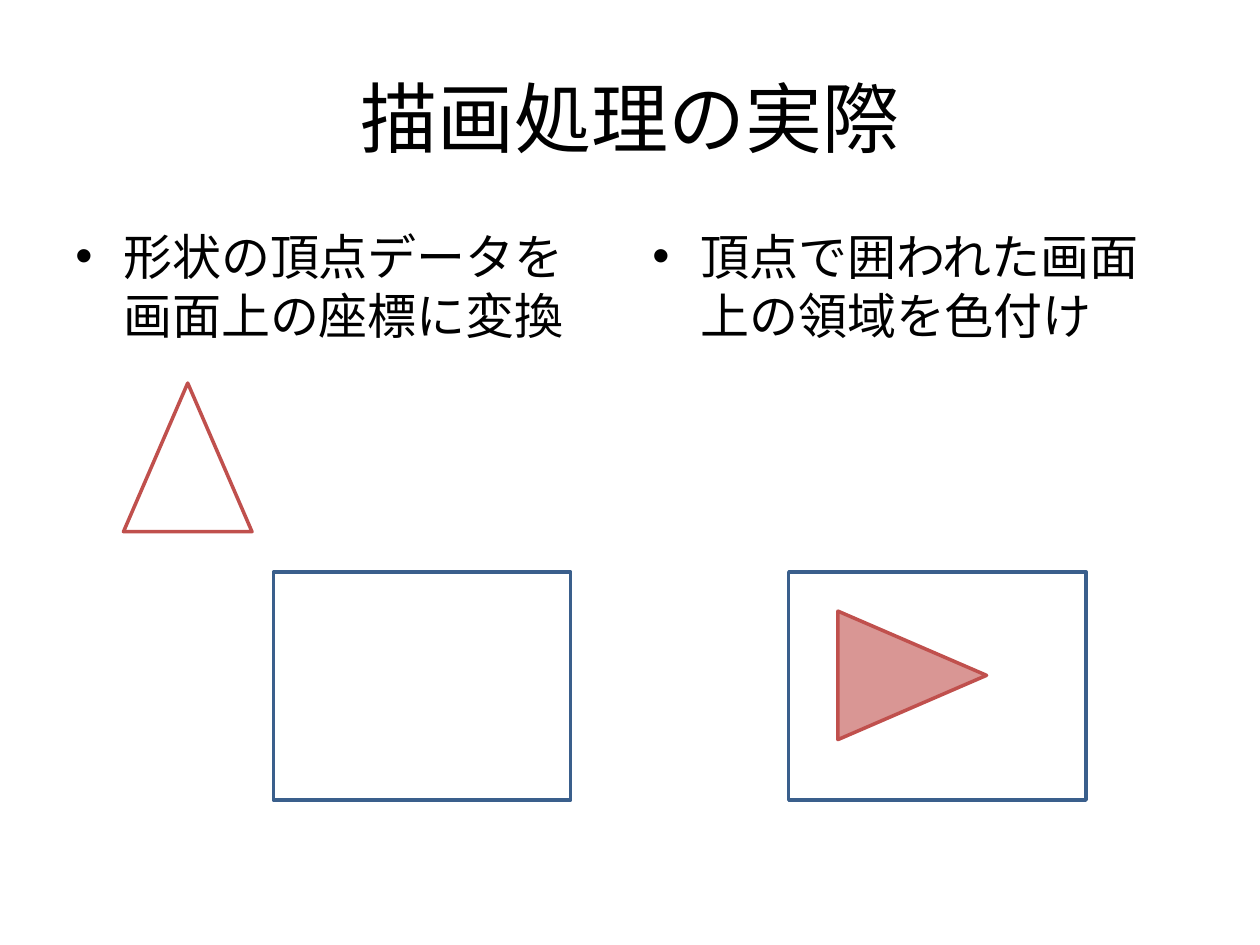
from lxml import etree
from pptx import Presentation
from pptx.dml.color import RGBColor
from pptx.enum.shapes import MSO_SHAPE
from pptx.enum.text import MSO_ANCHOR, PP_ALIGN
from pptx.oxml.ns import qn
from pptx.util import Inches, Pt

RECTANGLE, TRIANGLE = MSO_SHAPE.RECTANGLE, MSO_SHAPE.ISOSCELES_TRIANGLE
TOP, MIDDLE = MSO_ANCHOR.TOP, MSO_ANCHOR.MIDDLE
LEFT, CENTER = PP_ALIGN.LEFT, PP_ALIGN.CENTER

THEME = {
    "font": "Noto Sans CJK JP",
    "title_size": 44,
    "body_size": 28,
    "line_pitch": 1.2,
    "line_width": 2,
    "text": "000000",
    "screen_fill": "FFFFFF",
    "screen_line": "3A5F8C",
    "triangle_fill": "D99694",
    "triangle_line": "C0504D",
}

TITLE = "描画処理の実際"
STEPS = [
    "形状の頂点データを画面上の座標に変換",
    "頂点で囲われた画面上の領域を色付け",
]

SLIDE_SIZE = (10, 7.5)
MARGIN = 0.5
TITLE_TOP, TITLE_HEIGHT = 0.3, 1.25
STEP_TOP, STEP_WIDTH, STEP_HEIGHT = 1.75, 4.42, 4.95
BULLET_INDENT = 0.38

SCREEN_SIZE = (2.36, 1.81)
SCREEN_TOP = 4.54
SCREEN_LEFTS = [2.17, 6.26]
TRIANGLE_SIZE = (1.02, 1.18)
# position, rotation, fill colour
TRIANGLES = [
    ((0.98, 3.04), 0, None),
    ((6.73, 4.77), 90, THEME["triangle_fill"]),
]


def add_text(slide, text, box, size, anchor, align):
    frame = slide.shapes.add_textbox(*map(Inches, box)).text_frame
    frame.word_wrap = True
    frame.vertical_anchor = anchor
    paragraph = frame.paragraphs[0]
    paragraph.alignment = align
    paragraph.line_spacing = Pt(size * THEME["line_pitch"])
    run = paragraph.add_run()
    run.text = text
    for attribute, value in {"size": Pt(size), "name": THEME["font"]}.items():
        setattr(run.font, attribute, value)
    run.font.color.rgb = RGBColor.from_string(THEME["text"])
    east_asian = etree.SubElement(run.font._element, qn("a:ea"))
    east_asian.set("typeface", THEME["font"])
    return paragraph


def add_bullet(paragraph):
    paragraph.space_before = Pt(THEME["body_size"] * 0.2)
    properties = paragraph._p.get_or_add_pPr()
    indent = Inches(BULLET_INDENT)
    properties.set("marL", str(indent))
    properties.set("indent", str(-indent))
    etree.SubElement(properties, qn("a:buFont")).set("typeface", "Arial")
    etree.SubElement(properties, qn("a:buChar")).set("char", "•")


def add_figure(slide, kind, position, size, line, fill=None, rotation=0):
    figure = slide.shapes.add_shape(kind, *map(Inches, (*position, *size)))
    figure.shadow.inherit = False
    figure.rotation = rotation
    figure.line.color.rgb = RGBColor.from_string(line)
    figure.line.width = Pt(THEME["line_width"])
    if fill:
        figure.fill.solid()
        figure.fill.fore_color.rgb = RGBColor.from_string(fill)
    else:
        figure.fill.background()


def main():
    presentation = Presentation()
    presentation.slide_width, presentation.slide_height = map(Inches, SLIDE_SIZE)
    slide = presentation.slides.add_slide(presentation.slide_layouts[6])

    title_box = (MARGIN, TITLE_TOP, SLIDE_SIZE[0] - 2 * MARGIN, TITLE_HEIGHT)
    add_text(slide, TITLE, title_box, THEME["title_size"], MIDDLE, CENTER)

    step_lefts = [MARGIN, SLIDE_SIZE[0] - MARGIN - STEP_WIDTH]
    for left, step in zip(step_lefts, STEPS):
        step_box = (left, STEP_TOP, STEP_WIDTH, STEP_HEIGHT)
        add_bullet(add_text(slide, step, step_box, THEME["body_size"], TOP, LEFT))

    for left in SCREEN_LEFTS:
        add_figure(slide, RECTANGLE, (left, SCREEN_TOP), SCREEN_SIZE,
                   THEME["screen_line"], THEME["screen_fill"])
    for position, rotation, fill in TRIANGLES:
        add_figure(slide, TRIANGLE, position, TRIANGLE_SIZE,
                   THEME["triangle_line"], fill, rotation)

    presentation.save("out.pptx")


if __name__ == "__main__":
    main()
